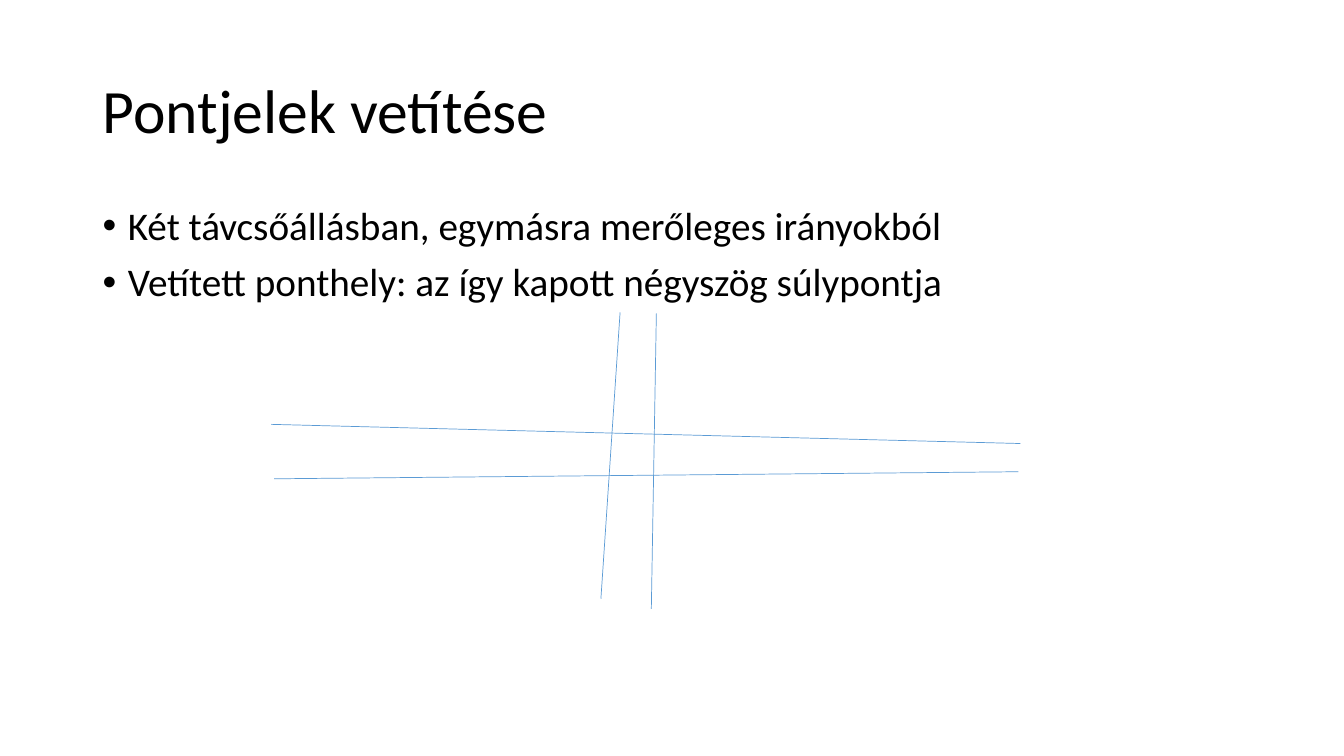
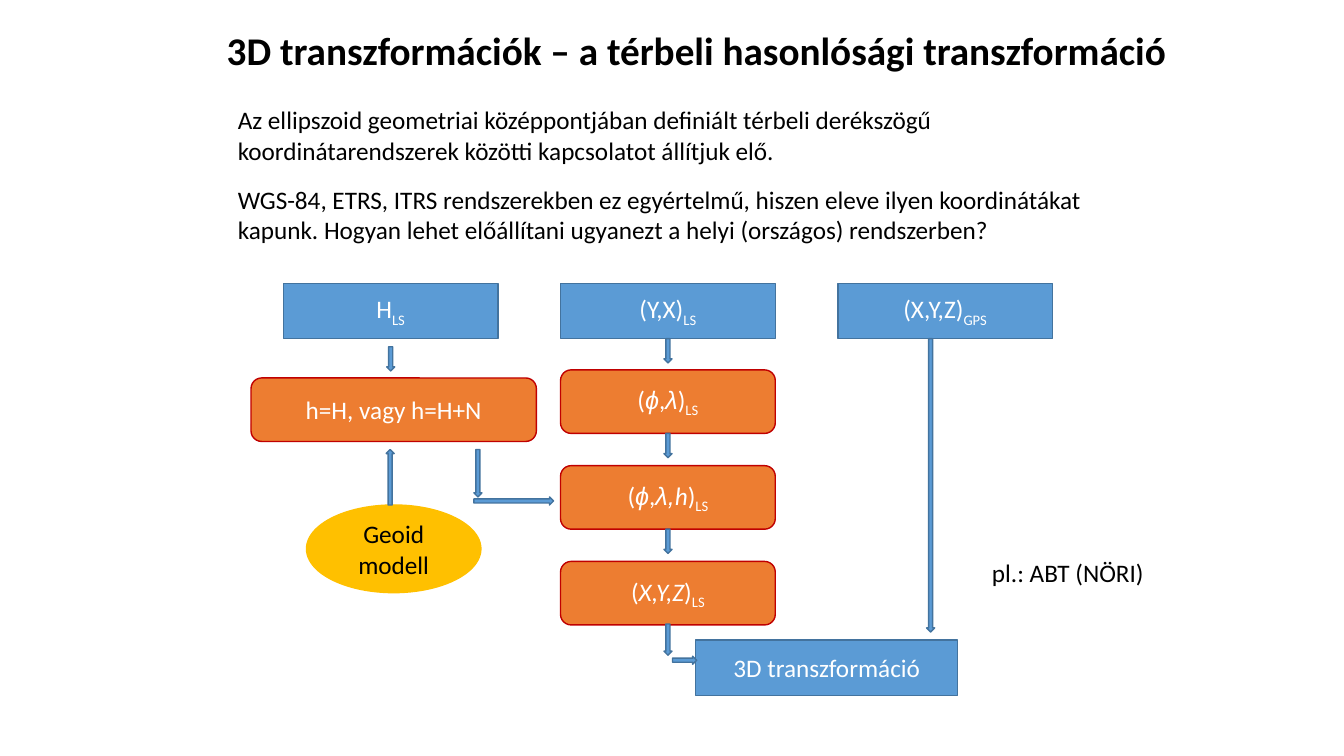
from dataclasses import dataclass

import lxml.etree
import pptx
import pptx.dml.color
import pptx.enum.shapes
import pptx.enum.text
import pptx.oxml.ns
import pptx.presentation
import pptx.shapes.autoshape
import pptx.slide
import pptx.text.text
import pptx.util

Inches = pptx.util.Inches
Pt = pptx.util.Pt
RGBColor = pptx.dml.color.RGBColor
Align = pptx.enum.text.PP_ALIGN
Anchor = pptx.enum.text.MSO_ANCHOR
Geometry = pptx.enum.shapes.MSO_SHAPE

BLACK = RGBColor(0x00, 0x00, 0x00)
WHITE = RGBColor(0xFF, 0xFF, 0xFF)
BLUE = RGBColor(0x5B, 0x9B, 0xD5)
DARK_BLUE = RGBColor(0x43, 0x73, 0x9E)
ORANGE = RGBColor(0xED, 0x7D, 0x31)
RED = RGBColor(0xC0, 0x00, 0x00)
GOLD = RGBColor(0xFF, 0xC0, 0x00)

BODY_FONT = "Calibri"
SYMBOL_FONT = "Arial"
ARROW_WIDTH = 0.08
SHORT_ARROW = 0.24


@dataclass(frozen=True)
class Area:
    left: float
    top: float
    width: float
    height: float

    @property
    def bottom(self) -> float:
        return self.top + self.height

    @property
    def middle(self) -> float:
        return self.left + self.width / 2


@dataclass(frozen=True)
class Span:
    text: str
    italic: bool = False
    font: str = BODY_FONT
    subscript: bool = False


@dataclass(frozen=True)
class TextStyle:
    size: float = 18
    color: RGBColor = BLACK
    bold: bool = False
    align: Align = Align.LEFT
    anchor: Anchor = Anchor.TOP
    line_spacing: float = 1.0
    space_before: float = 0
    bullet: bool = False
    wrap: bool = True


@dataclass(frozen=True)
class BoxStyle:
    geometry: Geometry
    fill: RGBColor
    line: RGBColor
    text_color: RGBColor = WHITE


@dataclass(frozen=True)
class Box:
    area: Area
    style: BoxStyle
    spans: tuple[Span, ...]


@dataclass(frozen=True)
class Arrow:
    geometry: Geometry
    area: Area


@dataclass(frozen=True)
class Ray:
    start: tuple[float, float]
    end: tuple[float, float]


SYSTEM_BOX = BoxStyle(Geometry.RECTANGLE, BLUE, DARK_BLUE)
STEP_BOX = BoxStyle(Geometry.ROUNDED_RECTANGLE, ORANGE, RED)
MODEL_BOX = BoxStyle(Geometry.OVAL, GOLD, GOLD, BLACK)
PAGE_TITLE = TextStyle(size=44, anchor=Anchor.MIDDLE, line_spacing=0.9)
BULLETS = TextStyle(size=28, line_spacing=0.9, space_before=10, bullet=True)
DIAGRAM_TITLE = TextStyle(size=28, bold=True, align=Align.RIGHT)
PLAIN = TextStyle()
LABEL = TextStyle(wrap=False)


def add_bullet(para: pptx.text.text._Paragraph) -> None:
    properties = para._p.get_or_add_pPr()
    properties.set("marL", str(Inches(0.25)))
    properties.set("indent", str(Inches(-0.25)))
    name = pptx.oxml.ns.qn
    lxml.etree.SubElement(properties, name("a:buFont"), typeface=SYMBOL_FONT)
    lxml.etree.SubElement(properties, name("a:buChar"), char="•")


def write(frame: pptx.text.text.TextFrame, paragraphs: list[tuple[Span, ...]],
          style: TextStyle) -> None:
    frame.word_wrap = style.wrap
    frame.vertical_anchor = style.anchor
    for index, spans in enumerate(paragraphs):
        para = frame.add_paragraph() if index else frame.paragraphs[0]
        para.alignment = style.align
        para.line_spacing = style.line_spacing
        para.space_before = Pt(style.space_before)
        if style.bullet:
            add_bullet(para)
        para.font.name = BODY_FONT
        para.font.size = Pt(style.size)
        para.font.bold = style.bold
        para.font.color.rgb = style.color
        for span in spans:
            run = para.add_run()
            run.text = span.text
            if span.italic:
                run.font.italic = True
            if span.font != BODY_FONT:
                run.font.name = span.font
            if span.subscript:
                run._r.get_or_add_rPr().set("baseline", "-25000")


def add_text(page: pptx.slide.Slide, area: Area, lines: list[str],
             style: TextStyle) -> None:
    box = page.shapes.add_textbox(Inches(area.left), Inches(area.top),
                                  Inches(area.width), Inches(area.height))
    write(box.text_frame, [(Span(line),) for line in lines], style)
    if not style.wrap:
        box.text_frame.auto_size = pptx.enum.text.MSO_AUTO_SIZE.SHAPE_TO_FIT_TEXT


def add_figure(page: pptx.slide.Slide, geometry: Geometry, area: Area,
               fill: RGBColor, line: RGBColor) -> pptx.shapes.autoshape.Shape:
    figure = page.shapes.add_shape(geometry, Inches(area.left), Inches(area.top),
                                   Inches(area.width), Inches(area.height))
    figure.shadow.inherit = False
    figure.fill.solid()
    figure.fill.fore_color.rgb = fill
    figure.line.color.rgb = line
    figure.line.width = Pt(1)
    return figure


def add_box(page: pptx.slide.Slide, box: Box) -> None:
    figure = add_figure(page, box.style.geometry, box.area, box.style.fill, box.style.line)
    style = TextStyle(color=box.style.text_color, align=Align.CENTER, anchor=Anchor.MIDDLE)
    write(figure.text_frame, [box.spans], style)


def add_ray(page: pptx.slide.Slide, ray: Ray) -> None:
    line = page.shapes.add_connector(
        pptx.enum.shapes.MSO_CONNECTOR.STRAIGHT,
        Inches(ray.start[0]), Inches(ray.start[1]), Inches(ray.end[0]), Inches(ray.end[1]))
    line.line.color.rgb = BLUE
    line.line.width = Pt(0.5)
    lxml.etree.SubElement(line._element.spPr, pptx.oxml.ns.qn("a:effectLst"))


def down_arrow(middle: float, top: float, length: float = SHORT_ARROW) -> Arrow:
    return Arrow(Geometry.DOWN_ARROW,
                 Area(middle - ARROW_WIDTH / 2, top, ARROW_WIDTH, length))


def right_arrow(left: float, top: float, length: float) -> Arrow:
    return Arrow(Geometry.RIGHT_ARROW, Area(left, top, length, ARROW_WIDTH))


def new_page(deck: pptx.presentation.Presentation) -> pptx.slide.Slide:
    return deck.slides.add_slide(deck.slide_layouts[6])


def build_projection(deck: pptx.presentation.Presentation) -> None:
    page = new_page(deck)
    add_text(page, Area(0.92, 0.4, 11.5, 1.45), ["Pontjelek vetítése"], PAGE_TITLE)
    add_text(page, Area(0.92, 2, 11.5, 4.76), [
        "Két távcsőállásban, egymásra merőleges irányokból",
        "Vetített ponthely: az így kapott négyszög súlypontja",
    ], BULLETS)
    for ray in (
        Ray((2.69, 4.21), (10.12, 4.4)),
        Ray((2.72, 4.75), (10.1, 4.68)),
        Ray((6.15, 3.1), (5.96, 5.94)),
        Ray((6.46, 6.04), (6.51, 3.11)),
    ):
        add_ray(page, ray)


def build_transformation(deck: pptx.presentation.Presentation) -> None:
    page = new_page(deck)
    add_text(page, Area(1.94, 0.21, 9.72, 0.57),
             ["3D transzformációk – a térbeli hasonlósági transzformáció"], DIAGRAM_TITLE)
    add_text(page, Area(2.26, 0.99, 8.82, 0.71), [
        "Az ellipszoid geometriai középpontjában definiált térbeli derékszögű "
        "koordinátarendszerek közötti kapcsolatot állítjuk elő."], PLAIN)
    add_text(page, Area(2.26, 1.78, 8.82, 0.71), [
        "WGS-84, ETRS, ITRS rendszerekben ez egyértelmű, hiszen eleve ilyen koordinátákat "
        "kapunk. Hogyan lehet előállítani ugyanezt a helyi (országos) rendszerben?"], PLAIN)

    local = Span("LS", subscript=True)
    opening, closing, comma = Span("("), Span(")"), Span(",")
    phi = Span("ϕ", italic=True, font=SYMBOL_FONT)
    sources = [Area(2.81 + 2.75 * column, 2.81, 2.13, 0.55) for column in range(3)]
    steps = [Area(sources[1].left, 3.67 + 0.95 * row, 2.13, 0.63) for row in range(3)]
    height_step = Area(2.49, 3.75, 2.83, 0.63)
    geoid = Area(3.04, 5.01, 1.73, 0.87)

    source_labels = (
        (Span("H"), local),
        (Span("(Y,X)"), local),
        (Span("(X,Y,Z)"), Span("GPS", subscript=True)),
    )
    step_labels = (
        (opening, phi, comma, Span("λ", italic=True, font=SYMBOL_FONT), closing, local),
        (opening, phi, comma, Span("λ,", italic=True, font=SYMBOL_FONT),
         Span("h", italic=True), closing, local),
        (opening, Span("X,Y,Z", italic=True), closing, local),
    )
    boxes = [Box(area, SYSTEM_BOX, label) for area, label in zip(sources, source_labels)]
    boxes += [Box(area, STEP_BOX, label) for area, label in zip(steps, step_labels)]
    boxes += [
        Box(height_step, STEP_BOX, (Span("h=H, vagy h=H+N"),)),
        Box(geoid, MODEL_BOX, (Span("Geoid modell"),)),
        Box(Area(6.9, 6.35, 2.6, 0.55), SYSTEM_BOX, (Span("3D transzformáció"),)),
    ]
    for box in boxes:
        add_box(page, box)

    chain = steps[0].middle
    arrows = [down_arrow(chain, area.bottom) for area in (sources[1], *steps[:2])]
    arrows += [
        down_arrow(sources[0].middle, 3.44),
        Arrow(Geometry.UP_ARROW, Area(3.83, 4.46, ARROW_WIDTH, 0.55)),
        down_arrow(9.23, sources[2].bottom, 2.91),
        right_arrow(6.67, 6.51, SHORT_ARROW),
        down_arrow(chain, 6.19, 0.31),
        right_arrow(4.7, 4.93, 0.79),
        down_arrow(4.74, 4.46, 0.47),
    ]
    for arrow in arrows:
        add_figure(page, arrow.geometry, arrow.area, BLUE, DARK_BLUE)

    add_text(page, Area(9.74, 5.48, 1.75, 0.4), ["pl.: ABT (NÖRI)"], LABEL)


def main() -> None:
    deck = pptx.Presentation()
    deck.slide_width = Inches(13.33)
    deck.slide_height = Inches(7.5)
    build_projection(deck)
    build_transformation(deck)
    deck.save("out.pptx")


if __name__ == "__main__":
    main()
